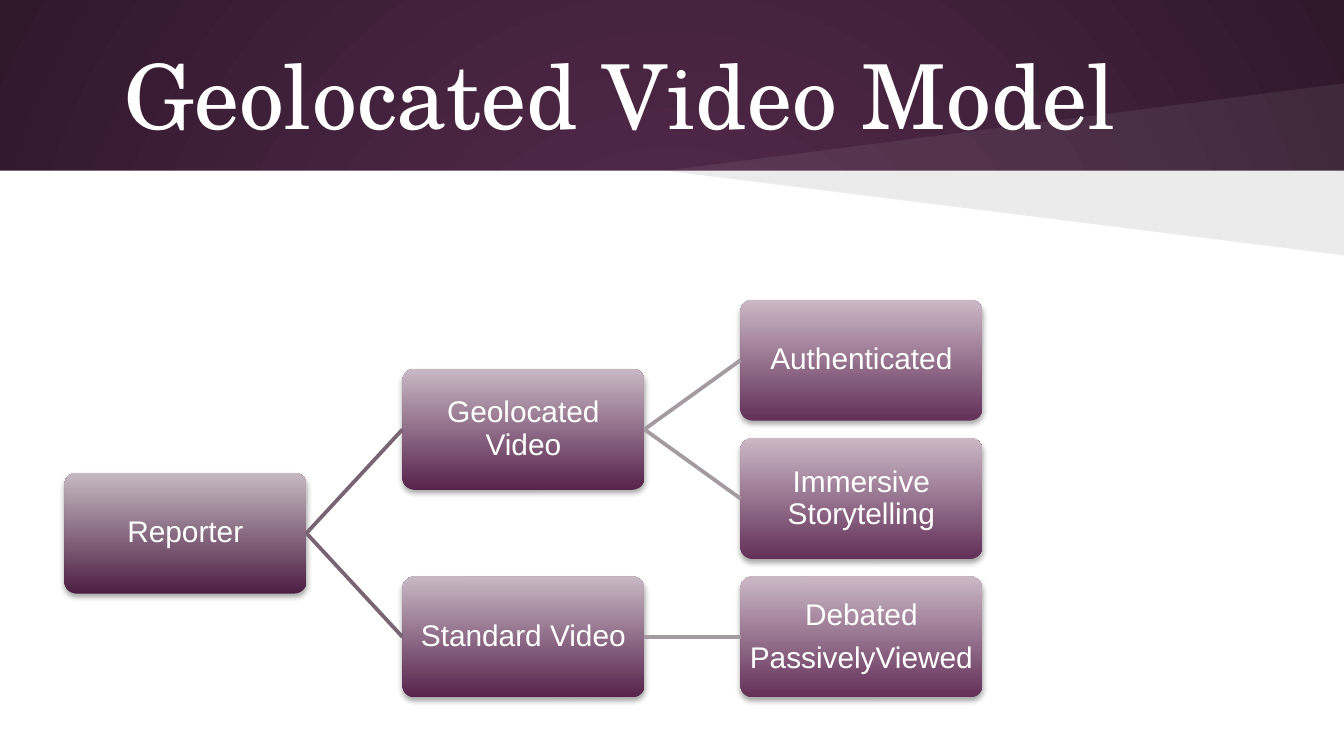
from pptx import Presentation
from pptx import util as u
from pptx.dml import color
from pptx.enum import shapes, text
from pptx.oxml import parse_xml
from pptx.oxml.ns import nsdecls

NS = nsdecls("a")


def hue(code):
    return color.RGBColor.from_string(code)


def blend(fill, low, high):
    fill.gradient()
    for stop, code in zip(fill.gradient_stops, (low, high)):
        stop.color.rgb = hue(code)


# Widescreen page, 16 to 9
wide, band = 10, 1.27
tall = wide * 9 / 16
deck = Presentation()
deck.slide_width, deck.slide_height = u.Inches(wide), u.Inches(tall)
page = deck.slides.add_slide(deck.slide_layouts[6])
art = page.shapes

# Radial backdrop
back = page.background.fill
blend(back, "592D50", "30182B")
grad = page.background._cSld.bg.bgPr.find(".//{*}gradFill")
grad.replace(grad.find("{*}lin"), parse_xml(
    f'<a:path {NS} path="circle">'
    '<a:fillToRect l="50000" t="50000" r="50000" b="50000"/></a:path>'))

# White body below the title band
body = art.add_shape(shapes.MSO_SHAPE.RECTANGLE, 0, u.Inches(band),
                     u.Inches(wide), u.Inches(tall - band))
body.shadow.inherit = False
body.fill.solid()
body.fill.fore_color.rgb = hue("FFFFFF")
body.line.fill.background()

# Translucent wedges above and below the band's edge
for edge, code, alpha in ((0.62, "FFFFFF", 7), (1.9, "000000", 8)):
    pen = art.build_freeform(u.Inches(4.95), u.Inches(band))
    pen.add_line_segments([(u.Inches(wide), u.Inches(y)) for y in (edge, band)])
    wedge = pen.convert_to_shape()
    wedge.shadow.inherit = False
    wedge.line.fill.background()
    wedge.fill.solid()
    wedge.fill.fore_color.rgb = hue(code)
    wedge.fill._xPr.find(".//{*}srgbClr").append(
        parse_xml(f'<a:alpha {NS} val="{alpha * 1000}"/>'))

# Title
frame = art.add_textbox(u.Inches(0.5), u.Inches(0.23),
                        u.Inches(9), u.Inches(0.94)).text_frame
frame.word_wrap = True
frame.vertical_anchor = text.MSO_ANCHOR.MIDDLE
frame.margin_top = frame.margin_bottom = u.Inches(0.1)
frame.margin_left = frame.margin_right = u.Inches(0.1)
line = frame.paragraphs[0]
line._p.get_or_add_pPr().set("indent", str(u.Inches(0.33)))
run = line.add_run()
run.text = "Geolocated Video Model"
run.font.name, run.font.size = "TeX Gyre Schola", u.Pt(48)
run.font.color.rgb = hue("FFFFFF")

# Tree boxes: column, row, lines of text
left, right, top = 0.48, 5.51, 2.23
box_w, box_h = 1.8, 0.9
step_x, step_y = (right - left) / 2, 1.03
tones = (("4D1F43", "C5B9C2"), ("57234C", "C8B8C4"), ("633058", "CBB8C6"))
nodes = (
    (0, 1.25, ["Reporter"]),
    (1, 0.5, ["Geolocated Video"]),
    (2, 0, ["Authenticated"]),
    (2, 1, ["Immersive Storytelling"]),
    (1, 2, ["Standard Video"]),
    (2, 2, ["Debated", "PassivelyViewed"]),
)
cards = []
for col, row, words in nodes:
    card = art.add_shape(
        shapes.MSO_SHAPE.ROUNDED_RECTANGLE,
        u.Inches(left + col * step_x), u.Inches(top + row * step_y),
        u.Inches(box_w), u.Inches(box_h))
    card.adjustments[0] = 0.1
    blend(card.fill, *tones[col])
    card.fill.gradient_angle = 90
    card.line.fill.background()
    card.shadow.inherit = False
    card._element.spPr.find("{*}effectLst").append(parse_xml(
        f'<a:outerShdw {NS} blurRad="{u.Pt(3.1)}" dist="{u.Pt(1.8)}" '
        'dir="5400000" rotWithShape="0"><a:srgbClr val="000000">'
        '<a:alpha val="35000"/></a:srgbClr></a:outerShdw>'))
    frame = card.text_frame
    frame.word_wrap = True
    frame.vertical_anchor = text.MSO_ANCHOR.MIDDLE
    frame.margin_left = frame.margin_right = u.Inches(0.04)
    frame.margin_top = frame.margin_bottom = u.Inches(0.04)
    for i, word in enumerate(words):
        line = frame.add_paragraph() if i else frame.paragraphs[0]
        line.alignment = text.PP_ALIGN.CENTER
        line.line_spacing, line.space_after = 0.9, u.Pt(5.6)
        run = line.add_run()
        run.text = word
        run.font.name, run.font.size = "Arial", u.Pt(16)
        run.font.color.rgb = hue("FFFFFF")
    cards.append(card)

# Branches from right side to left side
for start, end in ((0, 1), (0, 4), (1, 2), (1, 3), (4, 5)):
    link = art.add_connector(shapes.MSO_CONNECTOR.STRAIGHT, 0, 0, 0, 0)
    link.begin_connect(cards[start], 3)
    link.end_connect(cards[end], 1)
    link.line.color.rgb = hue("A49AA1" if start else "796474")
    link.line.width = u.Pt(2)
    link._element.spPr.append(parse_xml(f"<a:effectLst {NS}/>"))

deck.save("out.pptx")
